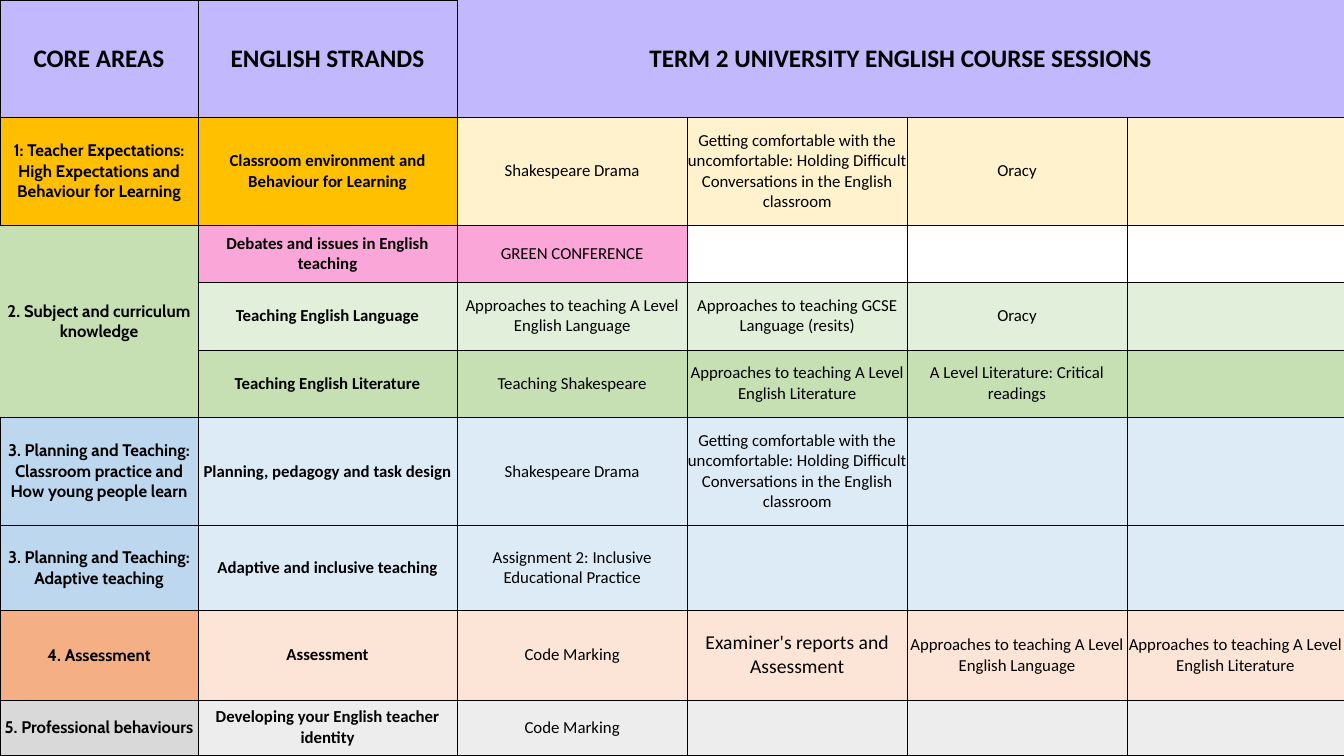
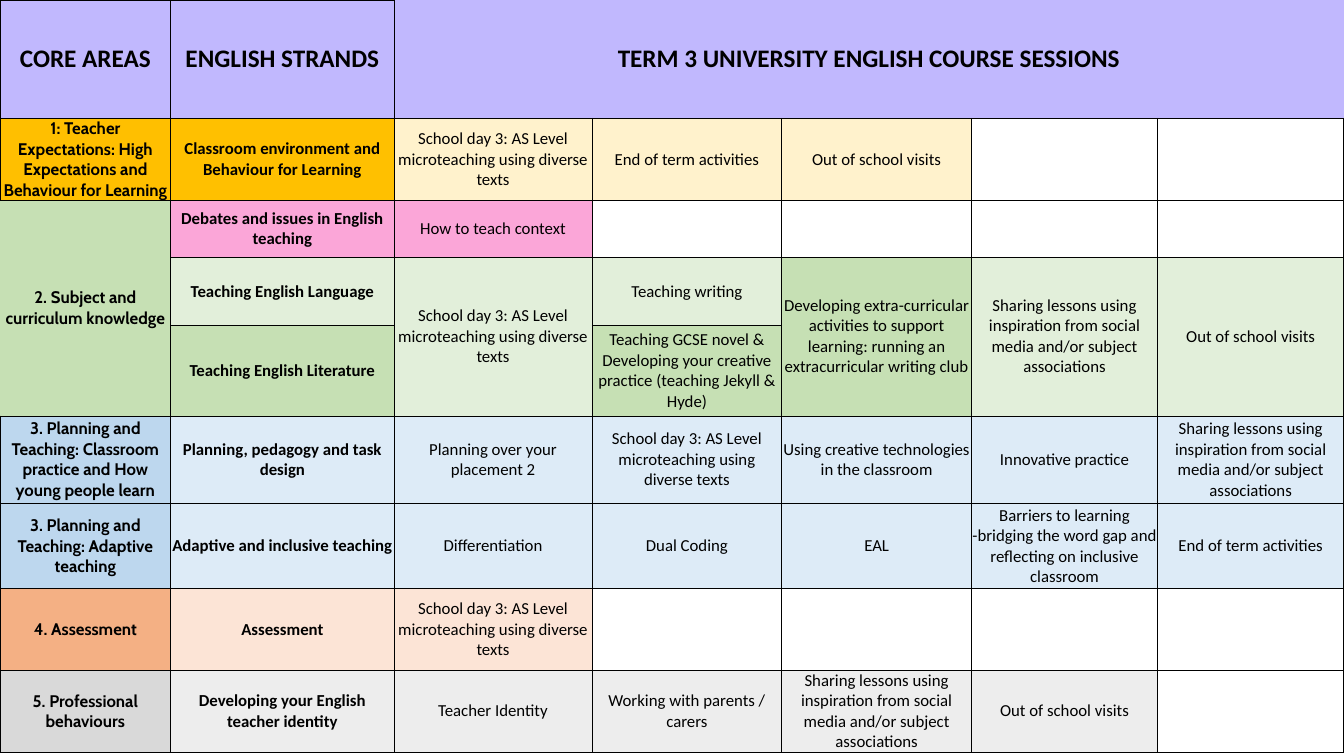
from lxml import etree
from pptx import Presentation
from pptx.dml.color import RGBColor
from pptx.enum.text import MSO_ANCHOR as Anchor, PP_ALIGN as Align
from pptx.oxml.ns import qn
from pptx.util import Pt

BLACK, WHITE, LILAC = "000000", "FFFFFF", "C1B8FE"
LIGHT_GREEN, GREEN = "E2EFDA", "C6E0B4"
BLUE, LIGHT_BLUE = "BDD7EE", "DDEBF7"
PINK, PEACH, GREY = "FBA6D8", "FCE4D6", "EDEDED"

STRANDS = [
    ("1: Teacher Expectations: High Expectations and Behaviour for Learning", "FFBF00",
     "Classroom environment and Behaviour for Learning", "FFC000", "FFF2CC"),
    ("2. Subject and curriculum knowledge", GREEN,
     "Debates and issues in English teaching", PINK, PINK),
    ("", GREEN, "Teaching English Language", LIGHT_GREEN, LIGHT_GREEN),
    ("", GREEN, "Teaching English Literature", GREEN, GREEN),
    ("3. Planning and Teaching: Classroom practice and How young people learn", BLUE,
     "Planning, pedagogy and task design", LIGHT_BLUE, LIGHT_BLUE),
    ("3. Planning and Teaching: Adaptive teaching", BLUE,
     "Adaptive and inclusive teaching", LIGHT_BLUE, LIGHT_BLUE),
    ("4. Assessment", "F4B084", "Assessment", PEACH, PEACH),
    ("5. Professional behaviours", "D9D9D9",
     "Developing your English teacher identity", GREY, GREY),
]

DIFFICULT = ("Getting comfortable with the uncomfortable: "
             "Holding Difficult Conversations in the English classroom")
A_LANGUAGE = "Approaches to teaching A Level English Language"
A_LITERATURE = "Approaches to teaching A Level English Literature"
SCHOOL_DAY = "School day 3: AS Level microteaching using diverse texts"
SHARING = "Sharing lessons using inspiration from social media and/or subject associations"
VISITS = "Out of school visits"
END_OF_TERM = "End of term activities"
WRITING_CLUB = ("Developing extra-curricular activities to support learning: "
                "running an extracurricular writing club")

TERMS = [
    {
        "title": "TERM 2 UNIVERSITY ENGLISH COURSE SESSIONS",
        "widths": [141.5, 185, 164.5, 157, 157, 155],
        "heights": [83.5, 77.5, 40.5, 48.5, 48, 77.5, 60.5, 64, 39.5],
        "sessions": [
            ["Shakespeare Drama", DIFFICULT, "Oracy", ""],
            ["GREEN CONFERENCE", None, None, None],
            [A_LANGUAGE, "Approaches to teaching GCSE Language (resits)", "Oracy", ""],
            ["Teaching Shakespeare", A_LITERATURE, "A Level Literature: Critical readings", ""],
            ["Shakespeare Drama", DIFFICULT, "", ""],
            ["Assignment 2: Inclusive Educational Practice", "", "", ""],
            ["Code Marking", "Examiner's reports and Assessment", A_LANGUAGE, A_LITERATURE],
            ["Code Marking", "", "", ""],
        ],
        "tall_columns": [],
        "special_fills": {},
        "special_sizes": {(7, 3): 14},
    },
    {
        "title": "TERM 3 UNIVERSITY ENGLISH COURSE SESSIONS",
        "widths": [122, 159.5, 141.5, 135.5, 135.5, 133, 133],
        "heights": [84.5, 58.5, 40.5, 49, 64.5, 62.5, 61, 58, 59],
        "sessions": [
            [SCHOOL_DAY, END_OF_TERM, VISITS, None, None],
            ["How to teach context", None, None, None, None],
            [SCHOOL_DAY, "Teaching writing", WRITING_CLUB, SHARING, VISITS],
            ["", "Teaching GCSE novel & Developing your creative practice "
                 "(teaching Jekyll & Hyde)", "", "", ""],
            ["Planning over your placement 2", SCHOOL_DAY,
             "Using creative technologies in the classroom", "Innovative practice", SHARING],
            ["Differentiation", "Dual Coding", "EAL",
             "Barriers to learning -bridging the word gap and reflecting on inclusive classroom",
             END_OF_TERM],
            [SCHOOL_DAY, None, None, None, None],
            ["Teacher Identity", "Working with parents / carers", SHARING, VISITS, None],
        ],
        "tall_columns": [2, 4, 5, 6],
        "special_fills": {(3, 4): GREEN},
        "special_sizes": {},
    },
]


def color(value):
    return RGBColor.from_string(value)


def write_cell(cell, text, fill, size=12, font="Calibri", bold=False, sides="LRTB", padding=0):
    cell.margin_left = cell.margin_right = Pt(padding)
    cell.margin_top = cell.margin_bottom = 0
    cell.vertical_anchor = Anchor.MIDDLE
    paragraph = cell.text_frame.paragraphs[0]
    paragraph.alignment = Align.CENTER
    paragraph.font.size = Pt(size)
    if text:
        run = paragraph.add_run()
        run.text = text
        run.font.size = Pt(size)
        run.font.name = font
        run.font.bold = bold
        run.font.color.rgb = color(BLACK)
    properties = cell._tc.get_or_add_tcPr()
    for side in "LRTB":
        line = etree.SubElement(properties, qn(f"a:ln{side}"), w=str(Pt(0.5)))
        if side in sides:
            solid = etree.SubElement(line, qn("a:solidFill"))
            etree.SubElement(solid, qn("a:srgbClr"), val=BLACK)
        else:
            etree.SubElement(line, qn("a:noFill"))
    cell.fill.solid()
    cell.fill.fore_color.rgb = color(fill)


presentation = Presentation()
presentation.slide_width = Pt(960)
presentation.slide_height = Pt(540)

for term in TERMS:
    widths, heights = term["widths"], term["heights"]
    slide = presentation.slides.add_slide(presentation.slide_layouts[6])
    shape = slide.shapes.add_table(len(heights), len(widths), 0, 0,
                                   Pt(sum(widths)), Pt(sum(heights)))
    table = shape.table
    table.first_row = table.horz_banding = False
    for column, width in zip(table.columns, widths):
        column.width = Pt(width)
    for row, height in zip(table.rows, heights):
        row.height = Pt(height)

    headings = ["CORE AREAS", "ENGLISH STRANDS", term["title"]]
    headings += [""] * (len(widths) - len(headings))
    for index, heading in enumerate(headings):
        sides = "LRTB" if index < 2 else "LB" if index == 2 else "B"
        write_cell(table.cell(0, index), heading, LILAC, size=18, bold=True, sides=sides)

    for row_index, (strand, sessions) in enumerate(zip(STRANDS, term["sessions"]), 1):
        area, area_fill, name, name_fill, session_fill = strand
        area_sides = "RTB" if 2 <= row_index <= 4 else "LRTB"
        write_cell(table.cell(row_index, 0), area, area_fill,
                   font="Cabin", bold=True, sides=area_sides, padding=1)
        write_cell(table.cell(row_index, 1), name, name_fill, bold=True)
        for column_index, session in enumerate(sessions, 2):
            place = row_index, column_index
            fill = WHITE if session is None else term["special_fills"].get(place, session_fill)
            write_cell(table.cell(*place), session, fill,
                       size=term["special_sizes"].get(place, 12))

    table.cell(0, 2).merge(table.cell(0, len(widths) - 1))
    table.cell(2, 0).merge(table.cell(4, 0))
    for column_index in term["tall_columns"]:
        table.cell(3, column_index).merge(table.cell(4, column_index))

presentation.save("out.pptx")
